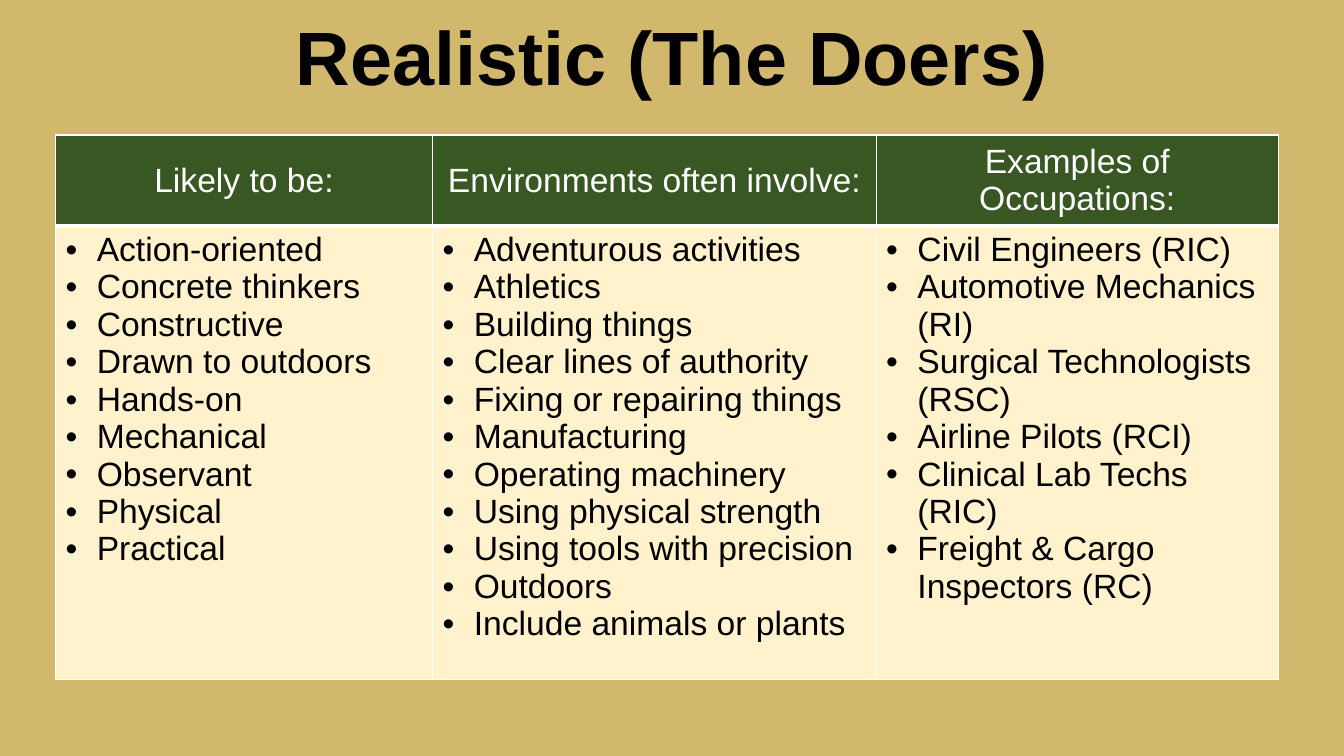
"""Build the slide on the Realistic (Doers) interest type."""
from dataclasses import dataclass

from lxml.etree import SubElement
from pptx import Presentation
from pptx.dml.color import RGBColor
from pptx.enum.text import MSO_ANCHOR as ANCHOR, PP_ALIGN as ALIGN
from pptx.oxml.ns import qn
from pptx.util import Inches, Pt

SAND = RGBColor(0xD1, 0xB8, 0x6C)
GREEN = RGBColor(0x38, 0x57, 0x23)
CREAM = RGBColor(0xFF, 0xF2, 0xCC)
WHITE = RGBColor(0xFF, 0xFF, 0xFF)
BLACK = RGBColor(0x00, 0x00, 0x00)
FONT = "Arial"
INDENT = Inches(0.31)


@dataclass(frozen=True)
class Column:
    heading: str
    width: float
    items: tuple[str, ...]


COLUMNS = (
    Column("Likely to be:", 3.74, (
        "Action-oriented", "Concrete thinkers", "Constructive",
        "Drawn to outdoors", "Hands-on", "Mechanical", "Observant",
        "Physical", "Practical")),
    Column("Environments often involve:", 4.4, (
        "Adventurous activities", "Athletics", "Building things",
        "Clear lines of authority", "Fixing or repairing things",
        "Manufacturing", "Operating machinery", "Using physical strength",
        "Using tools with precision", "Outdoors",
        "Include animals or plants")),
    Column("Examples of Occupations:", 3.99, (
        "Civil Engineers (RIC)", "Automotive Mechanics (RI)",
        "Surgical Technologists (RSC)", "Airline Pilots (RCI)",
        "Clinical Lab Techs (RIC)", "Freight & Cargo Inspectors (RC)")),
)


def write(p, text: str, *, size: float = 24, color: RGBColor = BLACK,
          bold: bool = False, align=ALIGN.LEFT, bullet: bool = False) -> None:
    p.alignment = align
    r = p.add_run()
    r.text = text
    r.font.name, r.font.size, r.font.bold = FONT, Pt(size), bold
    r.font.color.rgb = color
    if bullet:
        pPr = p._p.get_or_add_pPr()
        pPr.set("marL", str(INDENT))
        pPr.set("indent", str(-INDENT))
        SubElement(pPr, qn("a:buFont"), typeface=FONT)
        SubElement(pPr, qn("a:buChar"), char="•")


def style_cell(cell, fill: RGBColor, bottom: float = 1) -> None:
    tcPr = cell._tc.get_or_add_tcPr()
    for side, width in (("L", 1), ("R", 1), ("T", 1), ("B", bottom)):
        ln = SubElement(tcPr, qn(f"a:ln{side}"), w=str(Pt(width)))
        SubElement(SubElement(ln, qn("a:solidFill")), qn("a:srgbClr"),
                   val=str(WHITE))
    cell.fill.solid()
    cell.fill.fore_color.rgb = fill


def add_title(s, text: str) -> None:
    sp = s.shapes.add_textbox(0, Inches(0.17), Inches(13.33), Inches(0.89))
    tf = sp.text_frame
    tf.word_wrap = True
    tf.vertical_anchor = ANCHOR.BOTTOM
    p = tf.paragraphs[0]
    p.line_spacing = 0.9
    write(p, text, size=54, bold=True, align=ALIGN.CENTER)


def add_columns(s, columns: tuple[Column, ...]) -> None:
    heights = (0.84, 4.19)
    table = s.shapes.add_table(
        2, len(columns), Inches(0.55), Inches(1.34),
        Inches(sum(c.width for c in columns)), Inches(sum(heights))).table
    for row, height in zip(table.rows, heights):
        row.height = Inches(height)
    for i, column in enumerate(columns):
        table.columns[i].width = Inches(column.width)
        head, body = table.cell(0, i), table.cell(1, i)
        style_cell(head, GREEN, bottom=3)
        head.vertical_anchor = ANCHOR.MIDDLE
        write(head.text_frame.paragraphs[0], column.heading,
              color=WHITE, align=ALIGN.CENTER)
        style_cell(body, CREAM)
        tf = body.text_frame
        for n, item in enumerate(column.items):
            p = tf.add_paragraph() if n else tf.paragraphs[0]
            write(p, item, bullet=True)


def main() -> None:
    prs = Presentation()
    prs.slide_width, prs.slide_height = Inches(13.33), Inches(7.5)
    s = prs.slides.add_slide(prs.slide_layouts[6])
    s.background.fill.solid()
    s.background.fill.fore_color.rgb = SAND
    add_title(s, "Realistic (The Doers)")
    add_columns(s, COLUMNS)
    prs.save("out.pptx")


if __name__ == "__main__":
    main()
